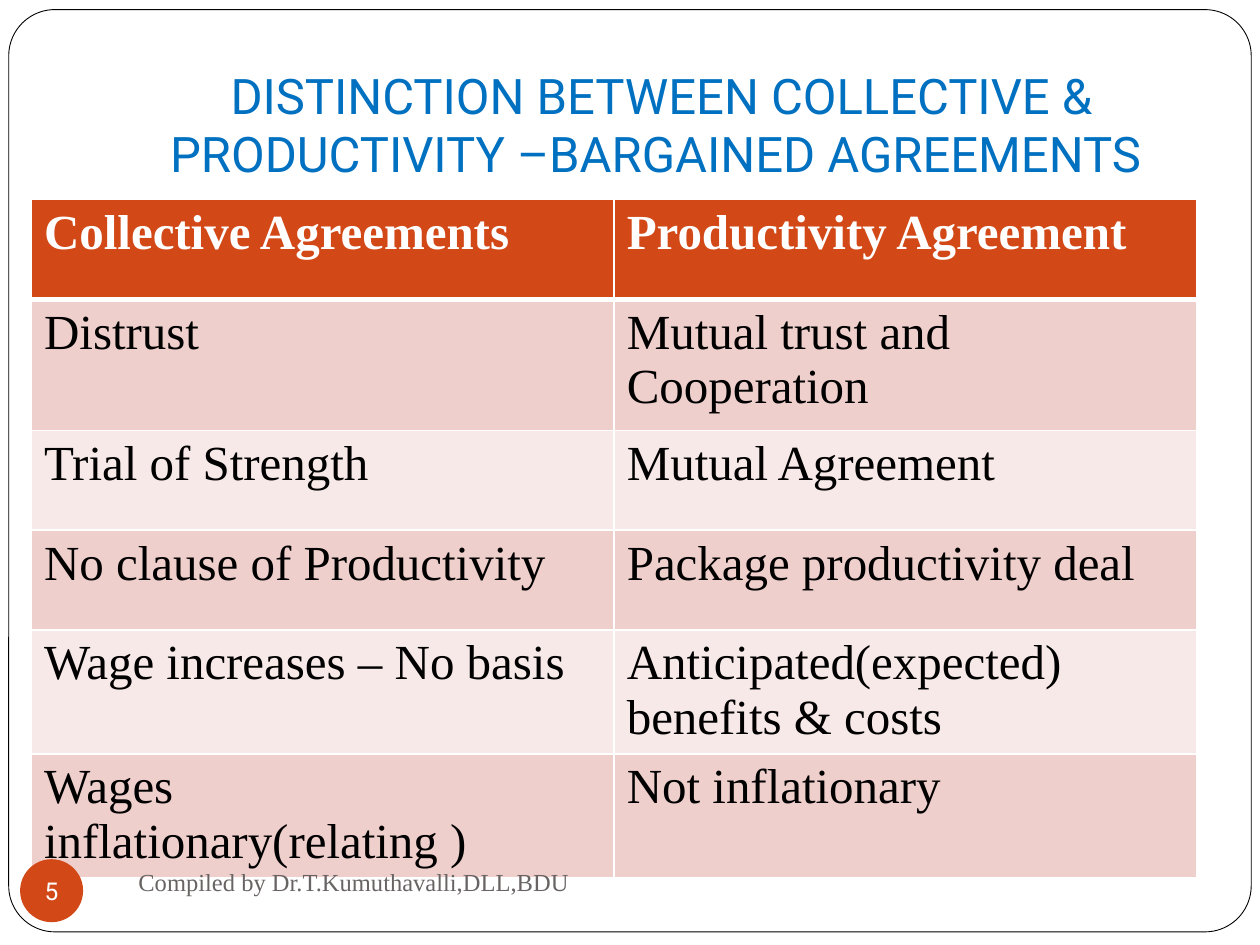
from dataclasses import dataclass

from lxml import etree
from pptx import Presentation
from pptx.dml.color import RGBColor
from pptx.enum.shapes import MSO_SHAPE
from pptx.enum.text import MSO_ANCHOR, PP_ALIGN
from pptx.oxml.ns import qn
from pptx.util import Pt

ROUNDED = MSO_SHAPE.ROUNDED_RECTANGLE
OVAL = MSO_SHAPE.OVAL
TOP, MIDDLE, BOTTOM = MSO_ANCHOR.TOP, MSO_ANCHOR.MIDDLE, MSO_ANCHOR.BOTTOM
LEFT, CENTER = PP_ALIGN.LEFT, PP_ALIGN.CENTER


@dataclass(frozen=True)
class Theme:
    white: str = "FFFFFF"
    black: str = "000000"
    title: str = "0070C0"
    accent: str = "D34817"
    band_dark: str = "EFCFCC"
    band_light: str = "F7E9E8"
    footer: str = "696464"
    sans: str = "Roboto"
    serif: str = "Times New Roman"
    large: float = 28
    small: float = 14


THEME = Theme()

AGREEMENTS = [
    ("Collective Agreements", "Productivity Agreement"),
    ("Distrust", "Mutual trust and Cooperation"),
    ("Trial of Strength", "Mutual Agreement"),
    ("No clause of Productivity", "Package productivity deal"),
    ("Wage increases – No basis", "Anticipated(expected) benefits & costs"),
    ("Wages inflationary(relating )", "Not inflationary"),
]
ROW_HEIGHTS = [57, 75, 57, 57, 69, 69]


def points(*lengths):
    return [Pt(length) for length in lengths]


def write_text(frame, text, font, size, color, bold=False, align=LEFT):
    paragraph = frame.paragraphs[0]
    paragraph.alignment = align
    run = paragraph.add_run()
    run.text = text
    formats = {"name": font, "size": Pt(size), "bold": bold}
    for name, value in formats.items():
        setattr(run.font, name, value)
    run.font.color.rgb = RGBColor.from_string(color)


def format_frame(frame, anchor, margins, wrap=True):
    left, top, right, bottom = points(*margins)
    formats = {
        "vertical_anchor": anchor,
        "word_wrap": wrap,
        "margin_left": left,
        "margin_top": top,
        "margin_right": right,
        "margin_bottom": bottom,
    }
    for name, value in formats.items():
        setattr(frame, name, value)


def add_text(slide, box, text, font, size, color, anchor, margins, align=LEFT):
    frame = slide.shapes.add_textbox(*points(*box)).text_frame
    format_frame(frame, anchor, margins)
    write_text(frame, text, font, size, color, align=align)


def add_filled_shape(slide, kind, box, fill):
    shape = slide.shapes.add_shape(kind, *points(*box))
    shape.shadow.inherit = False
    shape.fill.solid()
    shape.fill.fore_color.rgb = RGBColor.from_string(fill)
    shape.line.fill.background()
    return shape


def add_frame(slide):
    shape = add_filled_shape(slide, ROUNDED, (5, 5.5, 710, 527), THEME.white)
    shape.adjustments[0] = 0.05
    shape.line.color.rgb = RGBColor.from_string(THEME.black)
    shape.line.width = Pt(0.5)


def add_page_number(slide, number):
    shape = add_filled_shape(slide, OVAL, (11.5, 491, 36, 36), THEME.accent)
    format_frame(shape.text_frame, MIDDLE, (0, 0, 0, 0), wrap=False)
    write_text(shape.text_frame, number, THEME.sans, THEME.small, THEME.white, align=CENTER)


def set_borders(cell, widths):
    properties = cell._tc.get_or_add_tcPr()
    for side, width in widths.items():
        line = etree.SubElement(properties, qn(f"a:ln{side}"), w=str(Pt(width)))
        fill = etree.SubElement(line, qn("a:solidFill"))
        etree.SubElement(fill, qn("a:srgbClr"), val=THEME.white)


def format_cell(cell, text, row):
    header = row == 0
    bands = (THEME.band_light, THEME.band_dark)
    widths = {"L": 1, "R": 1, "T": 3 if row == 1 else 1, "B": 3 if header else 1}
    set_borders(cell, widths)
    cell.fill.solid()
    cell.fill.fore_color.rgb = RGBColor.from_string(THEME.accent if header else bands[row % 2])
    cell.vertical_anchor = TOP
    cell.margin_bottom = Pt(0)
    color = THEME.white if header else THEME.black
    write_text(cell.text_frame, text, THEME.serif, THEME.large, color, bold=header)


def add_comparison(slide, rows):
    box = points(18, 114, 666, sum(ROW_HEIGHTS))
    table = slide.shapes.add_table(len(rows), len(rows[0]), *box).table
    for row, (texts, height) in enumerate(zip(rows, ROW_HEIGHTS)):
        table.rows[row].height = Pt(height)
        for column, text in enumerate(texts):
            format_cell(table.cell(row, column), text, row)


def main():
    presentation = Presentation()
    presentation.slide_width, presentation.slide_height = points(720, 540)
    slide = presentation.slides.add_slide(presentation.slide_layouts[6])
    add_frame(slide)
    add_text(slide, (72, 21.6, 612, 90),
             "DISTINCTION BETWEEN COLLECTIVE & PRODUCTIVITY –BARGAINED AGREEMENTS ",
             THEME.sans, THEME.large, THEME.title, BOTTOM, (7.2, 3.6, 7.2, 7.2), CENTER)
    add_comparison(slide, AGREEMENTS)
    add_text(slide, (72, 486, 312, 36), "Compiled by Dr.T.Kumuthavalli,DLL,BDU",
             THEME.serif, THEME.small, THEME.footer, MIDDLE, (7.2, 3.6, 7.2, 3.6))
    add_page_number(slide, "5")
    presentation.save("out.pptx")


if __name__ == "__main__":
    main()
